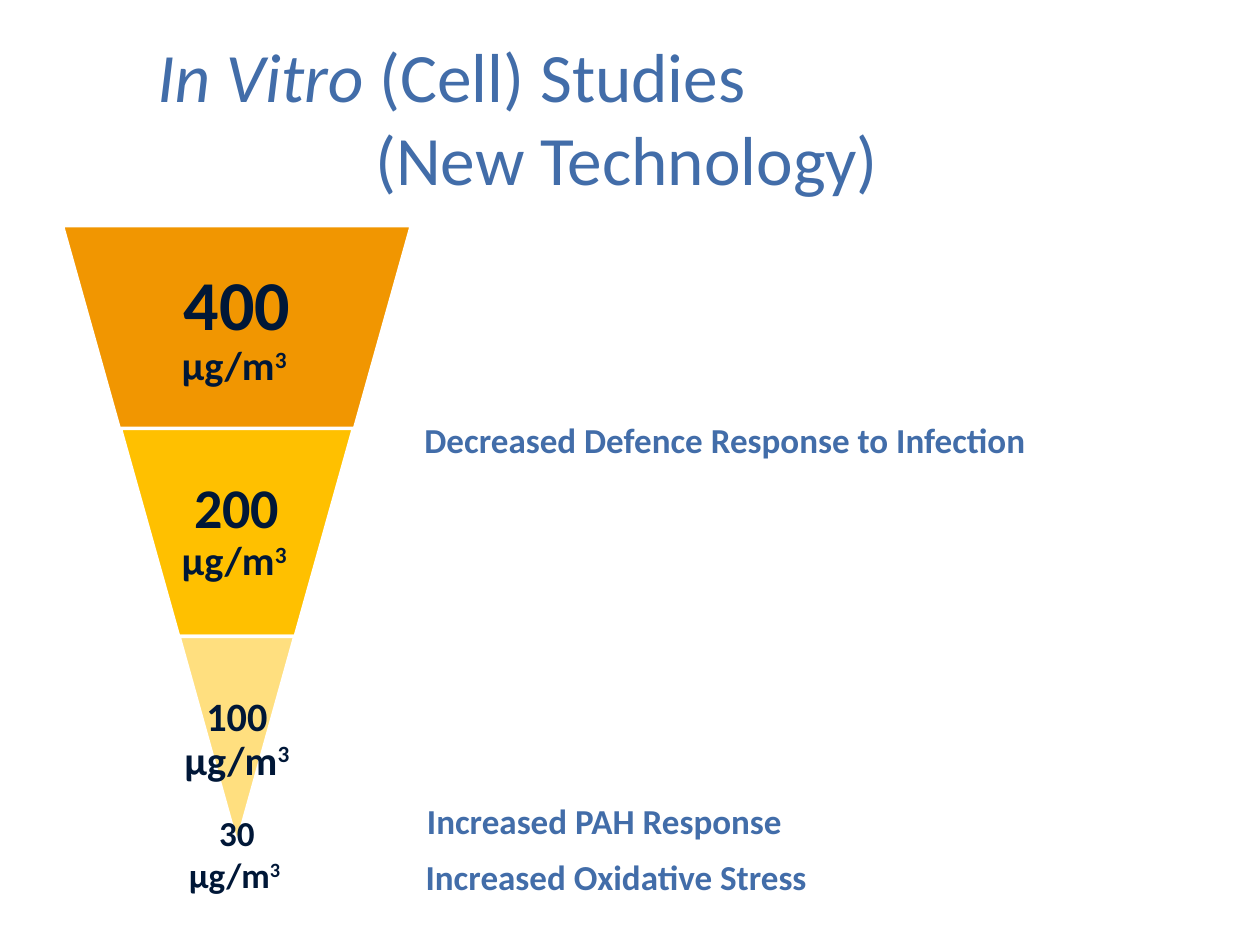
import pptx
import pptx.util
from lxml import etree
from pptx.dml.color import RGBColor
from pptx.enum.shapes import MSO_SHAPE
from pptx.enum.text import MSO_ANCHOR, PP_ALIGN
from pptx.oxml.ns import qn

Inches, Pt = pptx.util.Inches, pptx.util.Pt

BLUE, NAVY, WHITE = "426DA9", "001737", "FFFFFF"
UNIT = "µg/m"
CENTER_X, LAYER_H = 1.88, 1.65

# (runs as (text, italic), left indent)
TITLE = [
    ([("In Vitro ", True), ("(Cell) Studies", False)], 0.65),
    ([("(New Technology)", False)], 2.38),
]
# dose, dose size, top, width, taper, fill, opacity %, label width, inset
LAYERS = [
    ("400", 40, 1.79, 2.77, 0.28, "F19601", 100, 1.8, 0.06),
    ("200", 32, 3.4, 1.85, 0.28, "FFC000", 100, 1.2, 0.04),
    ("100", 23, 5.05, 0.92, 0.5, "FFC000", 50, 0.92, 0.03),
]
# text, left, top, width
EFFECTS = [
    ("Decreased Defence Response to Infection", 3.27, 3.27, 5.02),
    ("Increased PAH Response", 3.29, 6.3, 3.05),
    ("Increased Oxidative Stress", 3.28, 6.74, 3.26),
]


def rgb(hex_color):
    return RGBColor.from_string(hex_color)


def add_text_box(x, y, w, h, anchor=MSO_ANCHOR.TOP, wrap=True):
    tf = slide.shapes.add_textbox(Inches(x), Inches(y), Inches(w), Inches(h)).text_frame
    tf.word_wrap = wrap
    tf.vertical_anchor = anchor
    return tf


def add_run(p, text, size, color, bold=False, italic=False):
    r = p.add_run()
    r.text = text
    r.font.name = "Calibri"
    r.font.size = Pt(size)
    r.font.bold = bold
    r.font.italic = italic
    r.font.color.rgb = rgb(color)
    return r


def add_dose(tf, dose, dose_size, unit_size):
    """Write the dose above its unit, with a superscript 3."""
    p = tf.paragraphs[0]
    p.alignment = PP_ALIGN.CENTER
    add_run(p, dose, dose_size, NAVY, bold=True)
    p.add_line_break()
    add_run(p, UNIT, unit_size, NAVY, bold=True)
    cube = add_run(p, "3 ", unit_size, NAVY, bold=True)
    cube.font._element.set("baseline", "30000")
    return p


def add_layer(top, width, taper, fill, opacity):
    sp = slide.shapes.add_shape(
        MSO_SHAPE.TRAPEZOID, Inches(CENTER_X - width / 2), Inches(top),
        Inches(width), Inches(LAYER_H))
    sp.adjustments[0] = taper
    sp.rotation = 180
    sp.shadow.inherit = False
    sp.fill.solid()
    sp.fill.fore_color.rgb = rgb(fill)
    sp.line.color.rgb = rgb(WHITE)
    sp.line.width = Pt(2)
    if opacity < 100:
        color = sp._element.spPr.find(qn("a:solidFill")).find(qn("a:srgbClr"))
        etree.SubElement(color, qn("a:alpha")).set("val", str(opacity * 1000))


prs = pptx.Presentation()
prs.slide_width, prs.slide_height = Inches(10), Inches(7.5)
slide = prs.slides.add_slide(prs.slide_layouts[6])

tf = add_text_box(0.5, 0.3, 9, 1.25, MSO_ANCHOR.MIDDLE)
for i, (runs, indent) in enumerate(TITLE):
    p = tf.add_paragraph() if i else tf.paragraphs[0]
    p._p.get_or_add_pPr().set("marL", str(Inches(indent)))
    for text, italic in runs:
        add_run(p, text, 39.6, BLUE, italic=italic)

for dose, size, top, width, taper, fill, opacity, label_w, inset in LAYERS:
    add_layer(top, width, taper, fill, opacity)
    tf = add_text_box(CENTER_X - label_w / 2, top, label_w, LAYER_H, MSO_ANCHOR.MIDDLE)
    tf.margin_left = tf.margin_right = tf.margin_top = tf.margin_bottom = Inches(inset)
    add_dose(tf, dose, size, 23).line_spacing = 0.9

add_dose(add_text_box(CENTER_X - 0.51, 6.39, 1.02, 1.11), "30", 20, 20)

for text, x, y, w in EFFECTS:
    tf = add_text_box(x, y, w, 0.44, wrap=False)
    add_run(tf.paragraphs[0], text, 20, BLUE, bold=True)

prs.save("out.pptx")
